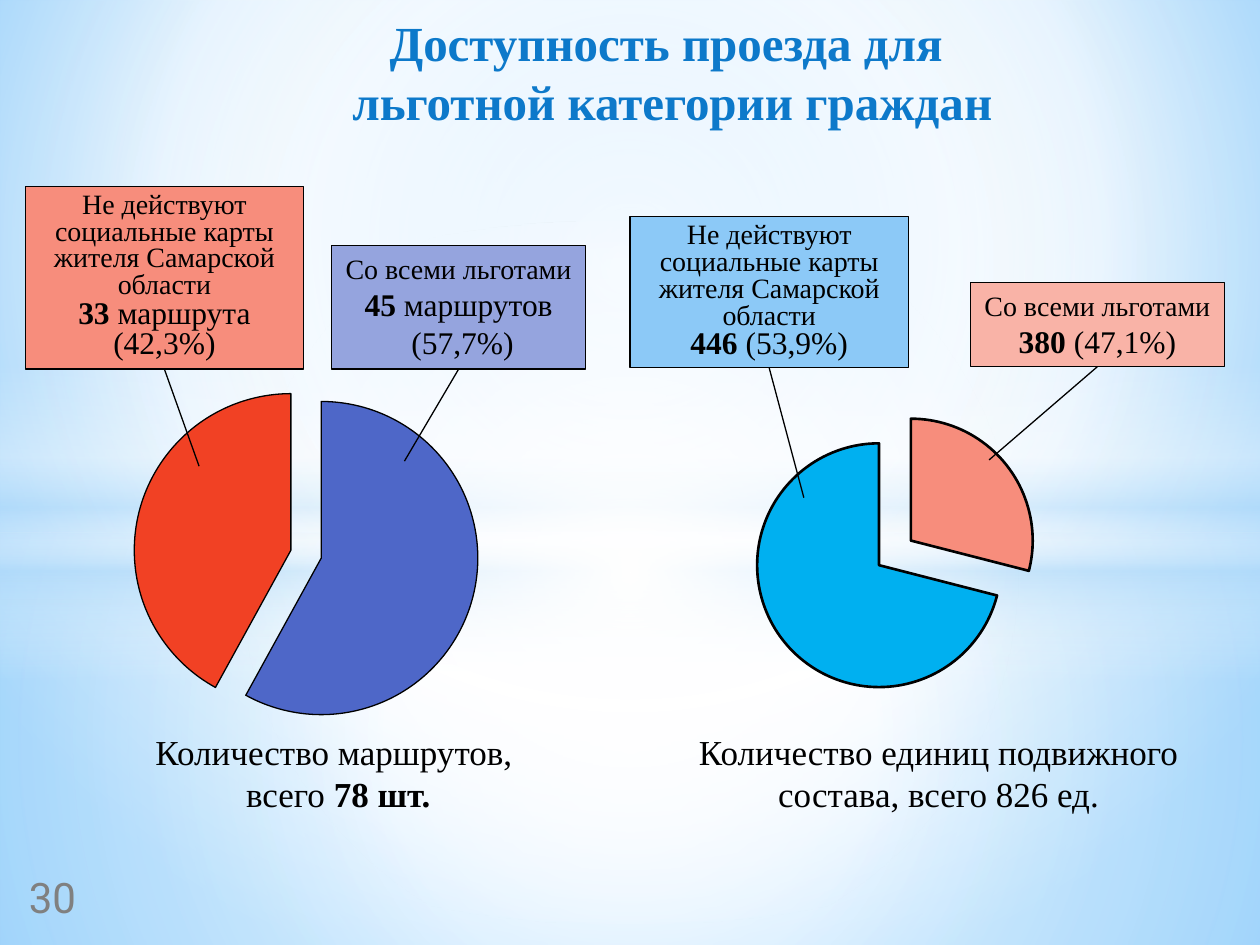
from dataclasses import dataclass
from typing import NamedTuple

from lxml.etree import SubElement as Sub
from pptx import Presentation
from pptx.chart.data import CategoryChartData as Data
from pptx.dml.color import RGBColor as Rgb
from pptx.enum.chart import XL_CHART_TYPE as Kind
from pptx.enum.shapes import MSO_CONNECTOR as Link, MSO_SHAPE as Form
from pptx.enum.text import MSO_ANCHOR as Anchor, PP_ALIGN as Align
from pptx.oxml.ns import qn
from pptx.util import Inches, Pt


@dataclass(frozen=True)
class Theme:
    serif: str = "Times New Roman"
    sans: str = "Roboto"
    ink: str = "000000"
    title: str = "0D79CA"
    grey: str = "808080"
    white: str = "FFFFFF"
    haze: str = "B4DCFA"
    sky: str = "9ED5FF"
    deep: str = "5BB9FF"
    coral: str = "F78D7C"
    rose: str = "F9B3A7"
    red: str = "F14124"
    blue: str = "4E67C8"
    lilac: str = "95A4DE"
    cyan: str = "00B0F0"
    pale: str = "8CC9F7"
    head: int = 28
    page: int = 24
    total: int = 20
    count: int = 18
    note: int = 16
    thin: float = 0.75
    bold: float = 1.5


T = Theme()


class Run(NamedTuple):
    text: str
    size: int = T.count
    bold: bool = False


class Stop(NamedTuple):
    pos: int
    color: str
    alpha: int = 100


class Glow(NamedTuple):
    form: Form
    box: tuple
    stops: list
    focus: tuple | None = (50, 50, 50, 50)


class Pie(NamedTuple):
    box: tuple
    plot: tuple
    values: tuple
    colors: tuple
    line: float
    gap: int


class Label(NamedTuple):
    box: tuple
    color: str
    lines: list
    tip: tuple
    wrap: bool = False
    space: float | None = None


class Note(NamedTuple):
    box: tuple
    lines: list
    wrap: bool = True


W, S = T.white, T.haze
GLOWS = [
    Glow(Form.RECTANGLE, (0, 4.23, 10, 3.27),
         [Stop(0, W, 91), Stop(37, W, 76), Stop(100, S, 79)]),
    Glow(Form.RECTANGLE, (0, 0, 10, 4.23),
         [Stop(0, W, 89), Stop(48, W, 62), Stop(100, S, 79)]),
    Glow(Form.RECTANGLE, (0, 2.9, 10, 2.5),
         [Stop(0, W, 0), Stop(29, W, 30), Stop(45, S, 40),
          Stop(55, W, 26), Stop(65, S, 60), Stop(100, W, 0)], None),
    Glow(Form.OVAL, (0, 1.75, 10, 5.58), [Stop(0, W), Stop(54, W, 0)]),
]
PIES = [
    Pie((4.7, 2.7, 5.11, 3.28), (0.2, 0.19, 0.59, 0.59), (29, 71),
        (T.coral, T.cyan), T.bold, 33),
    Pie((0, 2.75, 5.1, 3.36), (0.1, 0.13, 0.8, 0.74), (58, 42),
        (T.blue, T.red), T.thin, 20),
]
FULL = [Run("Со всеми льготами", T.note)]
NONE = [Run("Не действуют социальные карты жителя Самарской области", T.note)]
LABELS = [
    Label((7.7, 2.24, 2.02, 0.67), T.rose,
          [FULL, [Run("380", bold=True), Run(" (47,1%)")]], (7.85, 3.65)),
    Label((5, 1.72, 2.21, 1.2), T.pale,
          [NONE, [Run("446", bold=True), Run(" (53,9%)")]],
          (6.38, 3.95), True, 0.8),
    Label((2.63, 1.95, 2.02, 0.98), T.lilac,
          [FULL, [Run("45", bold=True), Run(" маршрутов")],
           [Run(" (57,7%)")]], (3.21, 3.66)),
    Label((0.2, 1.48, 2.21, 1.45), T.coral,
          [NONE, [Run("33", bold=True), Run(" маршрута (42,3%)")]],
          (1.58, 3.7), True, 0.8),
]
NOTES = [
    Note((1.12, 5.75, 3.13, 0.77),
         [[Run("Количество маршрутов, ", T.total)],
          [Run("всего ", T.total), Run("78 шт.", T.total, True)]], False),
    Note((5.43, 5.75, 4.04, 0.77),
         [[Run("Количество единиц подвижного состава, всего 826 ед.", T.total)]]),
]
TITLE = [[Run("Доступность проезда для ", T.head, True)],
         [Run("льготной категории граждан", T.head, True)]]


def inch(box: tuple) -> list:
    return [Inches(n) for n in box]


def write(frame, lines: list, font=T.serif, color=T.ink, align=Align.CENTER,
          wrap=True, space=None) -> None:
    frame.word_wrap = wrap
    frame.vertical_anchor = Anchor.TOP
    for i, line in enumerate(lines):
        para = frame.paragraphs[0] if i == 0 else frame.add_paragraph()
        para.alignment = align
        para.line_spacing = space
        for part in line:
            run = para.add_run()
            run.text = part.text
            run.font.name = font
            run.font.size = Pt(part.size)
            run.font.bold = part.bold
            run.font.color.rgb = Rgb.from_string(color)


def blend(fill, root, stops: list, focus: tuple | None) -> None:
    """Fill with a gradient around the focus box, or top to bottom without one."""
    fill.gradient()
    grad = root.find(f".//{qn('a:gradFill')}")
    for node in list(grad):
        grad.remove(node)
    row = Sub(grad, qn("a:gsLst"))
    for stop in stops:
        mark = Sub(row, qn("a:gs"), pos=str(stop.pos * 1000))
        tone = Sub(mark, qn("a:srgbClr"), val=stop.color)
        Sub(tone, qn("a:alpha"), val=str(stop.alpha * 1000))
    if focus:
        way = Sub(grad, qn("a:path"), path="circle")
        sides = {k: str(n * 1000) for k, n in zip("ltrb", focus)}
        Sub(way, qn("a:fillToRect"), **sides)
    else:
        Sub(grad, qn("a:lin"), ang="5400000", scaled="0")


def stroke(line, width: float) -> None:
    line.color.rgb = Rgb.from_string(T.ink)
    line.width = Pt(width)


def add_glow(slide, glow: Glow) -> None:
    shape = slide.shapes.add_shape(glow.form, *inch(glow.box))
    shape.shadow.inherit = False
    shape.line.fill.background()
    blend(shape.fill, shape._element, glow.stops, glow.focus)


def add_pie(slide, pie: Pie) -> None:
    """Draw a pie in a fixed plot area, with its last slice pulled out."""
    data = Data()
    data.categories = ["1", "2"]
    data.add_series("Series 1", pie.values)
    chart = slide.shapes.add_chart(Kind.PIE, *inch(pie.box), data).chart
    chart.has_legend = chart.has_title = False
    chart.font.name, chart.font.size = T.sans, Pt(T.count)
    chart.font.color.rgb = Rgb.from_string(T.ink)
    plot = chart.plots[0]
    plot.vary_by_categories = True
    for i, color in enumerate(pie.colors):
        form = plot.series[0].points[i].format
        form.fill.solid()
        form.fill.fore_color.rgb = Rgb.from_string(color)
        stroke(form.line, pie.line)
    last = plot._element.findall(f".//{qn('c:dPt')}")[-1]
    gap = Sub(last, qn("c:explosion"), val=str(pie.gap))
    last.find(qn("c:spPr")).addprevious(gap)
    area = chart._chartSpace.find(f".//{qn('c:plotArea')}")
    for old in area.findall(qn("c:layout")):
        area.remove(old)
    place = Sub(area, qn("c:layout"))
    area.insert(0, place)
    hand = Sub(place, qn("c:manualLayout"))
    Sub(hand, qn("c:layoutTarget"), val="inner")
    for key in ("xMode", "yMode"):
        Sub(hand, qn(f"c:{key}"), val="edge")
    for key, n in zip("xywh", pie.plot):
        Sub(hand, qn(f"c:{key}"), val=str(n))


def add_label(slide, label: Label) -> None:
    """Draw a framed label and its leader line to a slice."""
    shape = slide.shapes.add_shape(Form.RECTANGLE, *inch(label.box))
    shape.shadow.inherit = False
    shape.fill.solid()
    shape.fill.fore_color.rgb = Rgb.from_string(label.color)
    stroke(shape.line, T.thin)
    write(shape.text_frame, label.lines, wrap=label.wrap, space=label.space)
    tip = inch(label.tip)
    lead = slide.shapes.add_connector(Link.STRAIGHT, *tip, *tip)
    lead.begin_connect(shape, 2)
    stroke(lead.line, T.thin)
    Sub(lead._element.spPr, qn("a:effectLst"))


def add_note(slide, note: Note, **form) -> None:
    box = slide.shapes.add_textbox(*inch(note.box))
    write(box.text_frame, note.lines, wrap=note.wrap, **form)


def add_title(slide) -> None:
    title = slide.shapes.title
    title.left, title.top, title.width, title.height = inch((0.87, 0.05, 8.93, 1.04))
    write(title.text_frame, TITLE, color=T.title)
    slide.shapes._spTree.append(title._element)  # above the glows


def main() -> None:
    deck = Presentation()
    deck.slide_width, deck.slide_height = inch((10, 7.5))
    slide = deck.slides.add_slide(deck.slide_layouts[5])
    blend(slide.background.fill, slide._element,
          [Stop(0, T.sky), Stop(60, W), Stop(100, T.deep)], (20, 10, 20, 60))
    for draw, items in ((add_glow, GLOWS), (add_pie, PIES),
                        (add_label, LABELS), (add_note, NOTES)):
        for item in items:
            draw(slide, item)
    add_title(slide)
    add_note(slide, Note((0.13, 6.87, 0.62, 0.5), [[Run("30", T.page)]]),
             font=T.sans, color=T.grey, align=Align.LEFT)
    deck.save("out.pptx")


if __name__ == "__main__":
    main()
